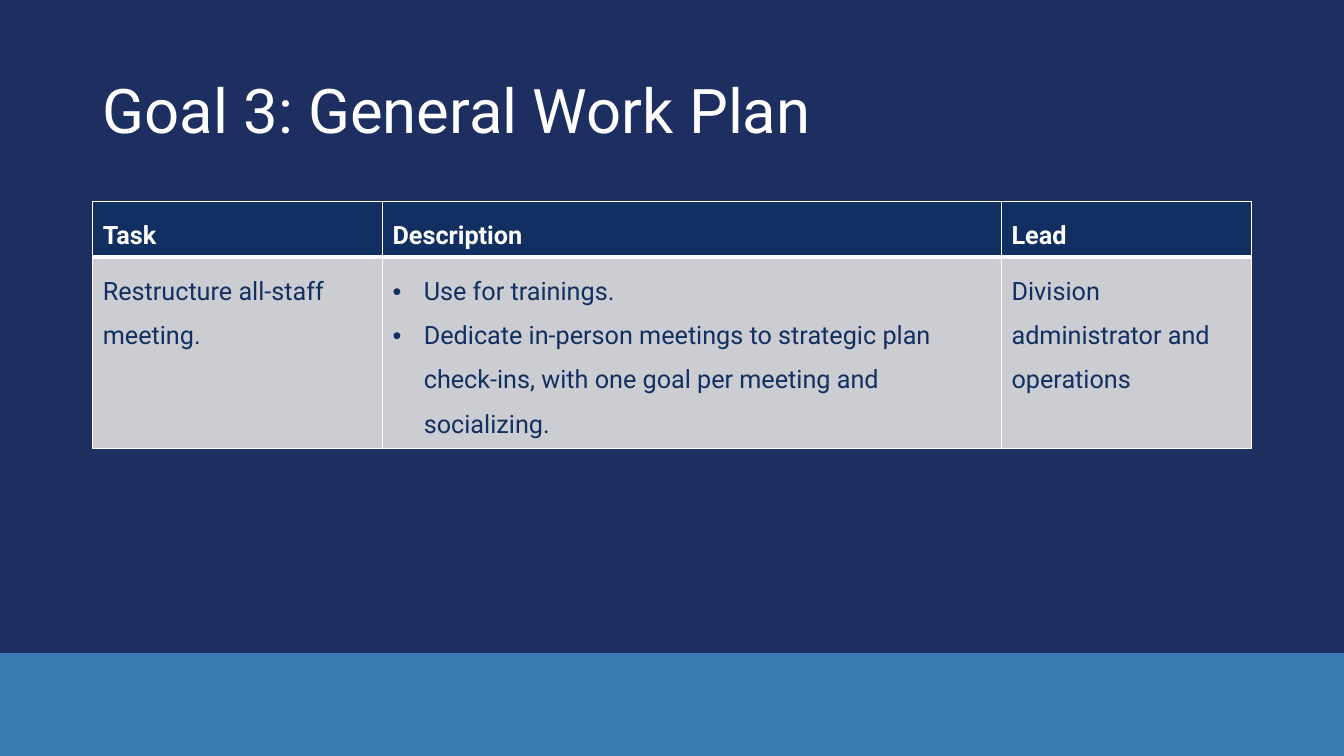
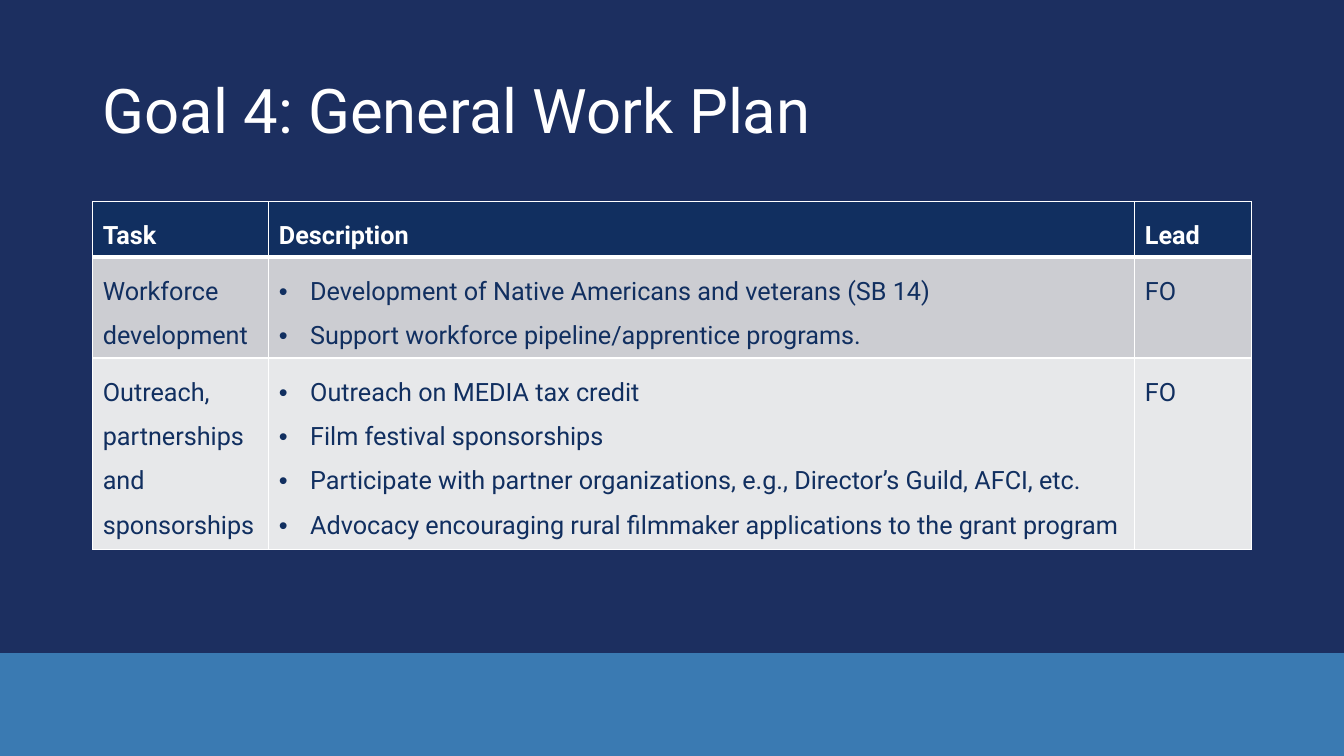
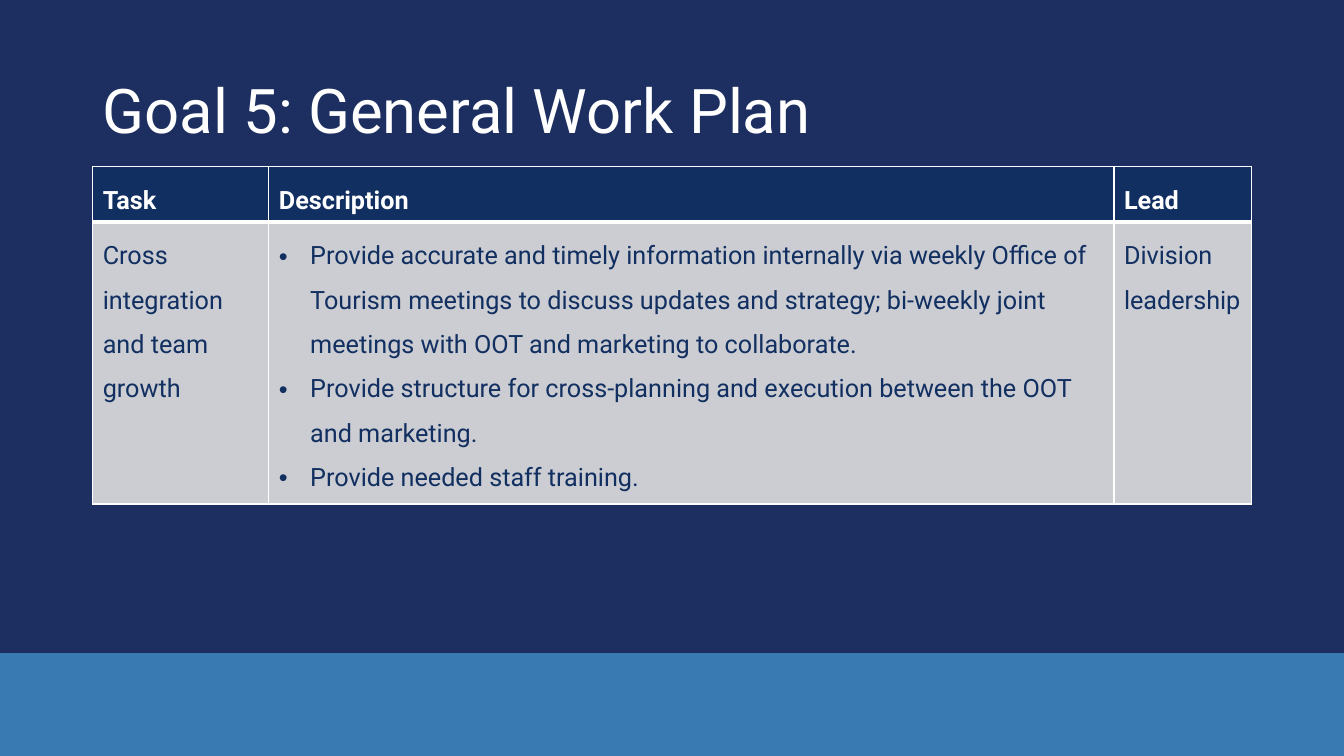
from typing import NamedTuple

from pptx import Presentation
from pptx.dml.color import RGBColor
from pptx.enum.shapes import MSO_SHAPE
from pptx.enum.text import MSO_ANCHOR
from pptx.oxml import parse_xml
from pptx.oxml.ns import nsdecls
from pptx.slide import Slide
from pptx.table import _Cell as Cell
from pptx.text.text import _Paragraph as Para
from pptx.util import Inches, Pt

# Colours and formats
NAVY = RGBColor(0x1C, 0x2F, 0x60)
INK = RGBColor(0x11, 0x2F, 0x60)
BLUE = RGBColor(0x3A, 0x7A, 0xB2)
WHITE = RGBColor(0xFF, 0xFF, 0xFF)
TINTS = (RGBColor(0xCC, 0xCD, 0xD2), RGBColor(0xE7, 0xE8, 0xEA))

TITLE = {"name": "Roboto", "size": Pt(44), "bold": False}
HEAD = {"name": "Roboto", "size": Pt(18), "bold": True}
BODY = HEAD | {"bold": False}

# Slide size, and places in percent of it
WIDE, HIGH = Inches(13.33), Inches(7.5)
LEFT, SPAN = 6.9, 86.25
TITLE_TOP, TITLE_HIGH = 5.33, 19.33
BAND_TOP = 86.4
ROW = Inches(0.41)
INDENT = Inches(0.31)
LABELS = ("Task", "Description", "Lead")


class Task(NamedTuple):
    name: str
    points: tuple[str, ...]
    lead: str


class Plan(NamedTuple):
    goal: int
    cols: tuple[float, float, float]  # percent of the table width
    tasks: tuple[Task, ...]
    top: float = 26.67  # percent of the slide height


PLANS = (
    Plan(3, (25, 53.4, 21.6), (
        Task("Restructure all-staff meeting.", (
            "Use for trainings.",
            "Dedicate in-person meetings to strategic plan check-ins, "
            "with one goal per meeting and socializing.",
        ), "Division administrator and operations"),
    )),
    Plan(4, (15.2, 74.7, 10.1), (
        Task("Workforce development", (
            "Development of Native Americans and veterans (SB 14)",
            "Support workforce pipeline/apprentice programs.",
        ), "FO"),
        Task("Outreach, partnerships and sponsorships", (
            "Outreach on MEDIA tax credit",
            "Film festival sponsorships",
            "Participate with partner organizations, e.g., "
            "Director’s Guild, AFCI, etc.",
            "Advocacy encouraging rural filmmaker applications "
            "to the grant program",
        ), "FO"),
    )),
    Plan(5, (15.2, 72.9, 11.9), (
        Task("Cross integration and team growth", (
            "Provide accurate and timely information internally via weekly "
            "Office of Tourism meetings to discuss updates and strategy; "
            "bi-weekly joint meetings with OOT and marketing to collaborate.",
            "Provide structure for cross-planning and execution "
            "between the OOT and marketing.",
            "Provide needed staff training.",
        ), "Division leadership"),
    ), top=22),
)


def across(part: float) -> int:
    return round(WIDE * part / 100)


def down(part: float) -> int:
    return round(HIGH * part / 100)


def write(para: Para, text: str, form: dict, color: RGBColor,
          space: float) -> None:
    para.line_spacing = space
    run = para.add_run()
    run.text = text
    for key, value in form.items():
        setattr(run.font, key, value)
    run.font.color.rgb = color


def bullet(para: Para) -> None:
    props = para._p.get_or_add_pPr()
    props.set("marL", str(INDENT))
    props.set("indent", str(-INDENT))
    props.append(parse_xml(f'<a:buFont {nsdecls("a")} typeface="Arial"/>'))
    props.append(parse_xml(f'<a:buChar {nsdecls("a")} char="•"/>'))


def border(cell: Cell, sides: dict[str, float]) -> None:
    props = cell._tc.get_or_add_tcPr()
    for side, width in sides.items():
        props.append(parse_xml(
            f'<a:ln{side} {nsdecls("a")} w="{Pt(width)}"><a:solidFill>'
            f'<a:srgbClr val="{WHITE}"/></a:solidFill></a:ln{side}>'))


def fill_cell(cell: Cell, lines: tuple[str, ...], form: dict,
              color: RGBColor, back: RGBColor, sides: dict[str, float],
              listed: bool = False) -> None:
    border(cell, sides)
    cell.fill.solid()
    cell.fill.fore_color.rgb = back
    frame = cell.text_frame
    for num, line in enumerate(lines):
        para = frame.add_paragraph() if num else frame.paragraphs[0]
        if listed:
            bullet(para)
        write(para, line, form, color, 1.5)


def add_frame(slide: Slide, title: str) -> None:
    # Bottom band
    band = slide.shapes.add_shape(MSO_SHAPE.RECTANGLE, 0, down(BAND_TOP),
                                  WIDE, HIGH - down(BAND_TOP))
    band.shadow.inherit = False
    band.fill.solid()
    band.fill.fore_color.rgb = BLUE
    band.line.fill.background()
    # Title
    box = slide.shapes.add_textbox(across(LEFT), down(TITLE_TOP),
                                   across(SPAN), down(TITLE_HIGH))
    frame = box.text_frame
    frame.word_wrap = True
    frame.vertical_anchor = MSO_ANCHOR.MIDDLE
    write(frame.paragraphs[0], title, TITLE, WHITE, 0.9)


def add_plan(slide: Slide, plan: Plan) -> None:
    count = len(plan.tasks) + 1
    table = slide.shapes.add_table(count, len(LABELS), across(LEFT),
                                   down(plan.top), across(SPAN),
                                   ROW * count).table
    table.horz_banding = False
    for col, part in zip(table.columns, plan.cols):
        col.width = round(across(SPAN) * part / 100)
    # Heading row, with a heavy rule below
    for col, label in enumerate(LABELS):
        fill_cell(table.cell(0, col), (label,), HEAD, WHITE, INK,
                  {"L": 1, "R": 1, "T": 1, "B": 3})
    # Task rows in alternating tints
    for row, task in enumerate(plan.tasks, 1):
        back = TINTS[(row - 1) % len(TINTS)]
        for col, lines in enumerate(((task.name,), task.points, (task.lead,))):
            fill_cell(table.cell(row, col), lines, BODY, INK, back,
                      {"L": 1, "R": 1, "B": 1}, listed=col == 1)


def main() -> None:
    deck = Presentation()
    deck.slide_width, deck.slide_height = WIDE, HIGH
    ground = deck.slide_master.background.fill
    ground.solid()
    ground.fore_color.rgb = NAVY
    for plan in PLANS:
        slide = deck.slides.add_slide(deck.slide_layouts[6])
        add_frame(slide, f"Goal {plan.goal}: General Work Plan")
        add_plan(slide, plan)
    deck.save("out.pptx")


if __name__ == "__main__":
    main()
